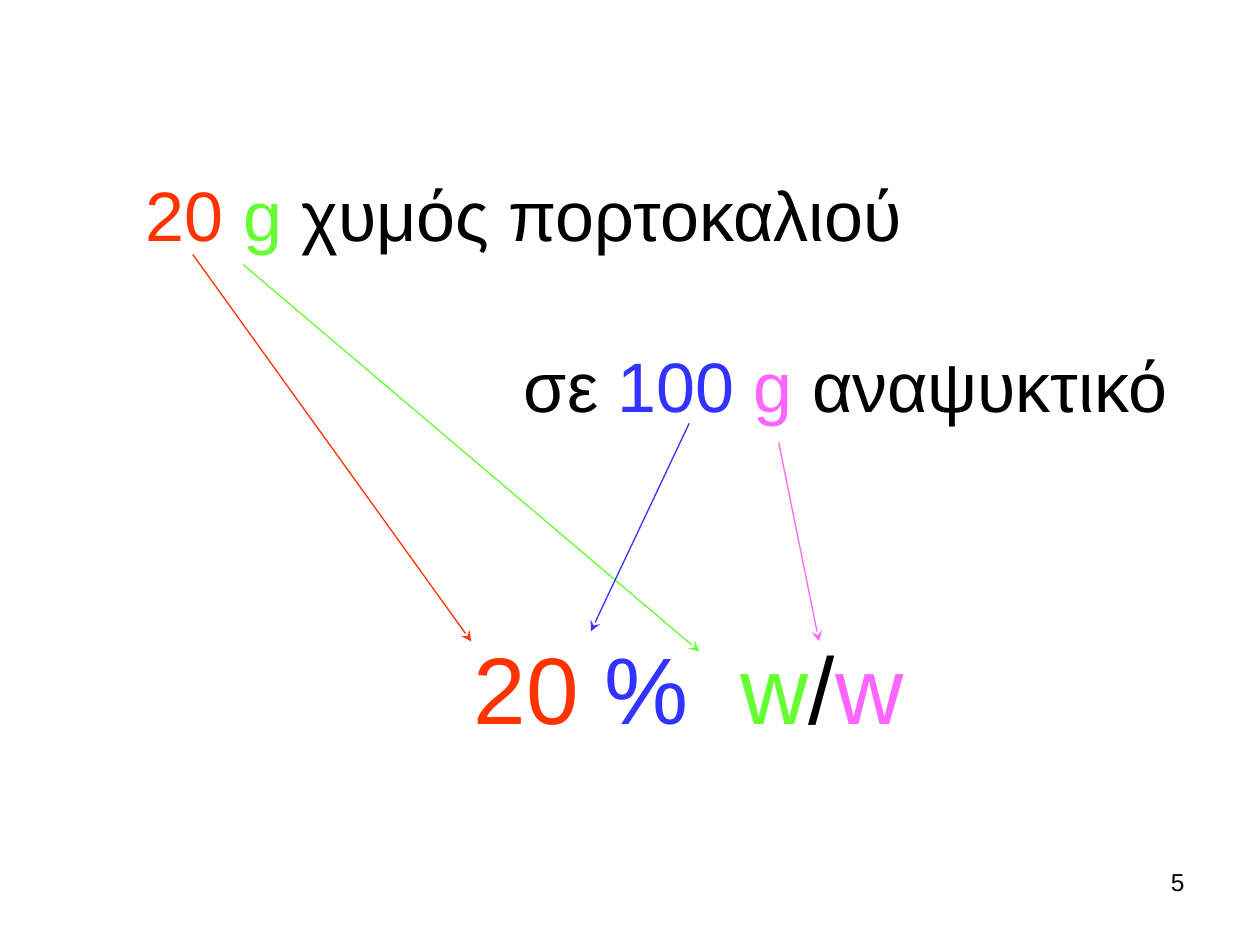
from pptx import Presentation
from pptx.dml.color import RGBColor
from pptx.enum.shapes import MSO_CONNECTOR
from pptx.enum.text import PP_ALIGN
from pptx.oxml.ns import qn
from pptx.util import Inches, Pt
from lxml.etree import SubElement

INK = {"red": "FF3300", "green": "66FF33", "blue": "3333FF",
       "pink": "FF66FF", "black": "000000"}
CELL = 0.1  # grid of 100 columns by 75 rows


def grid(*cells):
    return [Inches(n * CELL) for n in cells]


def tint(name):
    return RGBColor.from_string(INK[name])


def add_runs(para, parts, size):
    for text, ink in parts:
        run = para.add_run()
        run.text = text
        run.font.name = "Arial"
        run.font.size = Pt(size)
        run.font.color.rgb = tint(ink)


def add_text(slide, cells, lines, size):
    frame = slide.shapes.add_textbox(*grid(*cells)).text_frame
    frame.word_wrap = True
    for i, parts in enumerate(lines):
        para = frame.add_paragraph() if i else frame.paragraphs[0]
        add_runs(para, parts, size)
    return frame.paragraphs


def add_arrow(slide, ends, ink):
    arrow = slide.shapes.add_connector(MSO_CONNECTOR.STRAIGHT, *grid(*ends))
    arrow.line.color.rgb = tint(ink)
    arrow.line.width = Pt(0.75)
    SubElement(arrow.line._get_or_add_ln(), qn("a:tailEnd"), type="stealth")
    SubElement(arrow._element.spPr, qn("a:effectLst"))


def set_tab(para, col):
    tabs = SubElement(para._p.get_or_add_pPr(), qn("a:tabLst"))
    SubElement(tabs, qn("a:tab"), pos=str(grid(col)[0]), algn="l")


def main():
    deck = Presentation()
    deck.slide_width, deck.slide_height = grid(100, 75)
    slide = deck.slides.add_slide(deck.slide_layouts[6])

    # Result: percent by weight
    result = [("20 ", "red"), ("%\t", "blue"), ("w", "green"),
              ("/", "black"), ("w", "pink")]
    set_tab(add_text(slide, (36.6, 49.5, 37, 10.1), [result], 54)[0], 21.2)

    # Amounts: juice, then the drink indented below it
    juice = [("20 ", "red"), ("g ", "green"), ("χυμός πορτοκαλιού", "black")]
    drink = [("σε ", "black"), ("100 ", "blue"), ("g ", "pink"),
             ("αναψυκτικό", "black")]
    paras = add_text(slide, (10.6, 13.1, 84, 21), [juice, drink], 40)
    paras[1].space_before = Pt(50)
    paras[1]._p.get_or_add_pPr().set("marL", str(grid(30)[0]))

    # Arrows from each amount to its part of the result
    for ink, ends in {
        "red": (15.3, 20.2, 37.4, 50.9),
        "green": (19.3, 21, 55.5, 51.7),
        "blue": (54.7, 33.6, 46.9, 50.1),
        "pink": (61.8, 35.1, 65, 50.9),
    }.items():
        add_arrow(slide, ends, ink)

    # Page number
    page = add_text(slide, (71.7, 68.3, 23.3, 5.2), [[("5", "black")]], 14)
    page[0].alignment = PP_ALIGN.RIGHT

    deck.save("out.pptx")


if __name__ == "__main__":
    main()
